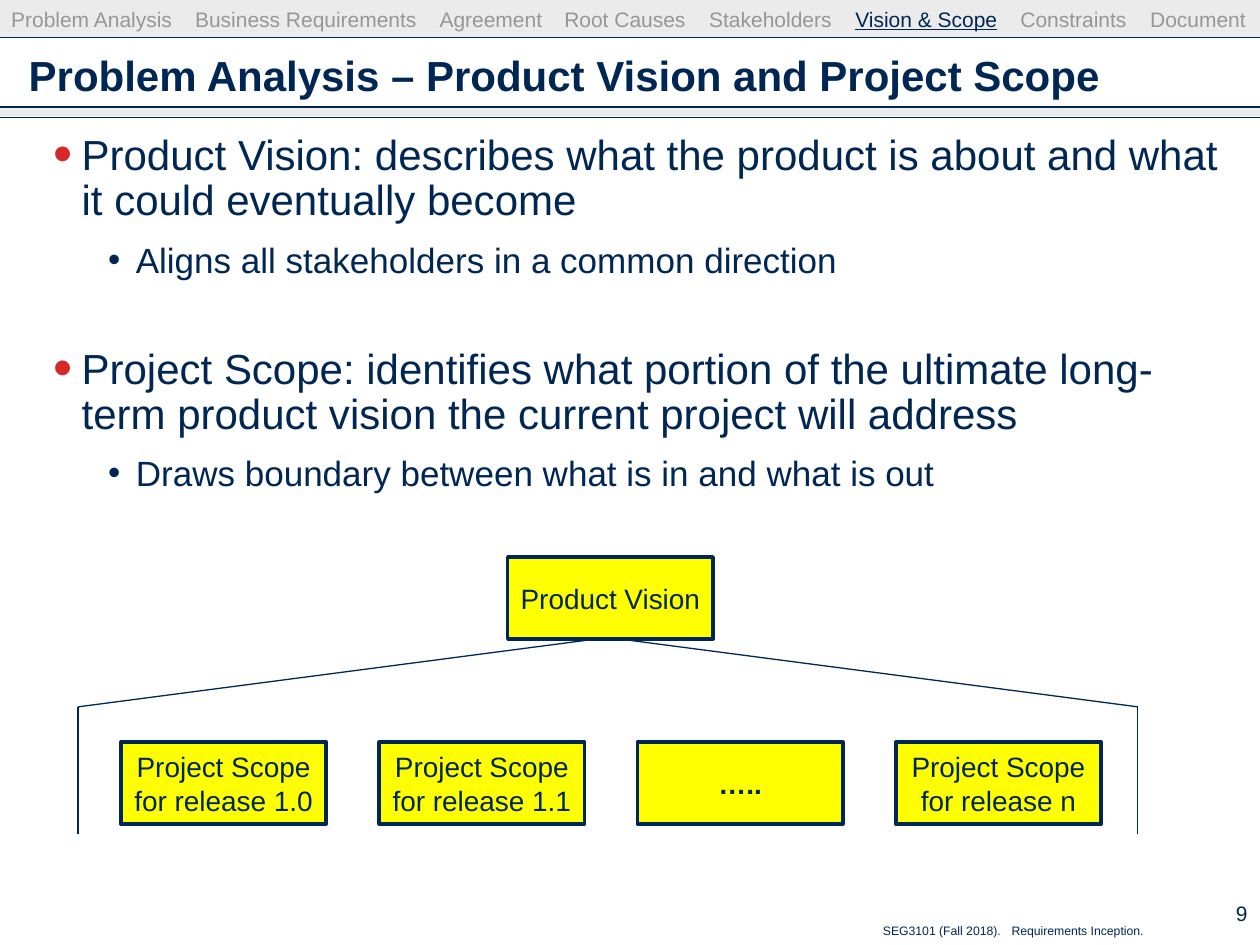
from dataclasses import dataclass

from lxml.etree import SubElement
from pptx import Presentation
from pptx.dml.color import RGBColor
from pptx.enum.shapes import MSO_CONNECTOR, MSO_SHAPE
from pptx.enum.text import MSO_ANCHOR, PP_ALIGN
from pptx.oxml.ns import qn
from pptx.util import Inches, Pt

COLORS = {"navy": "002654", "gray": "969696", "band": "CDCDCD",
          "yellow": "FFFF00", "red": "D62828"}


@dataclass
class Box:
    left: float
    top: float
    width: float
    height: float


@dataclass
class BulletLevel:
    size: int
    indent: float
    color: str
    bullet_percent: int


@dataclass
class Bullet:
    text: str
    level: int
    space_before: int


LEVELS = [BulletLevel(24, 0.42, "red", 130), BulletLevel(20, 0.85, "navy", 100)]
HANGING = 0.22
BULLETS = [
    Bullet("Product Vision: describes what the product is about and what "
           "it could eventually become", 0, 0),
    Bullet("Aligns all stakeholders in a common direction", 1, 6),
    Bullet("Project Scope: identifies what portion of the ultimate long-term "
           "product vision the current project will address", 0, 38),
    Bullet("Draws boundary between what is in and what is out", 1, 6),
]
TOPICS = ["Problem Analysis", "Business Requirements", "Agreement", "Root Causes",
          "Stakeholders", "Vision & Scope", "Constraints", "Document"]
TOPIC_TABS = [1.46, 3.4, 4.39, 5.54, 6.7, 8.01, 9.04]
CURRENT_TOPIC = "Vision & Scope"
RELEASES = ["Project Scope\nfor release 1.0", "Project Scope\nfor release 1.1",
            "…..", "Project Scope\nfor release n"]
RELEASE_LEFT, RELEASE_STEP, RELEASE_TOP = 0.96, 2.05, 5.89
BOX_WIDTH, BOX_HEIGHT = 1.63, 0.65


def rgb(name: str) -> RGBColor:
    return RGBColor.from_string(COLORS[name])


def style_font(font, size: float, color: str = "navy", **values) -> None:
    for name, value in {"name": "Arial", "size": Pt(size), **values}.items():
        setattr(font, name, value)
    font.color.rgb = rgb(color)


def lengths(box: Box) -> list:
    return [Inches(value) for value in (box.left, box.top, box.width, box.height)]


def add_text_box(slide, box: Box, **frame_values):
    """Add a wrapping text box and return its text frame."""
    frame = slide.shapes.add_textbox(*lengths(box)).text_frame
    for name, value in {"word_wrap": True, **frame_values}.items():
        setattr(frame, name, value)
    return frame


def add_line(slide, start: tuple[float, float], end: tuple[float, float]) -> None:
    line = slide.shapes.add_connector(
        MSO_CONNECTOR.STRAIGHT, *[Inches(value) for value in (*start, *end)])
    line.line.color.rgb = rgb("navy")
    line.line.width = Pt(0.75)
    SubElement(line.element.spPr, qn("a:effectLst"))


def add_band(slide, box: Box) -> None:
    """Add a gray strip at 40 % opacity."""
    band = slide.shapes.add_shape(MSO_SHAPE.RECTANGLE, *lengths(box))
    band.shadow.inherit = False
    band.fill.solid()
    band.fill.fore_color.rgb = rgb("band")
    band.line.fill.background()
    color = next(band.element.spPr.iter(qn("a:srgbClr")))
    SubElement(color, qn("a:alpha"), val="40000")


def add_yellow_box(slide, left: float, top: float, text: str) -> None:
    shape = slide.shapes.add_shape(
        MSO_SHAPE.RECTANGLE, *lengths(Box(left, top, BOX_WIDTH, BOX_HEIGHT)))
    shape.shadow.inherit = False
    shape.fill.solid()
    shape.fill.fore_color.rgb = rgb("yellow")
    shape.line.color.rgb = rgb("navy")
    shape.line.width = Pt(2)
    frame = shape.text_frame
    frame.margin_left = frame.margin_right = Inches(0.06)
    frame.vertical_anchor = MSO_ANCHOR.MIDDLE
    paragraph = frame.paragraphs[0]
    paragraph.text = text
    paragraph.alignment = PP_ALIGN.CENTER
    for run in paragraph.runs:
        style_font(run.font, 16, bold=text == "…..")


def set_tabs(paragraph, positions: list[float]) -> None:
    properties = paragraph._p.get_or_add_pPr()
    tab_list = SubElement(properties, qn("a:tabLst"))
    for position in positions:
        SubElement(tab_list, qn("a:tab"), pos=str(Inches(position)), algn="l")


def add_bullet(paragraph, bullet: Bullet) -> None:
    level = LEVELS[bullet.level]
    paragraph.level = bullet.level
    paragraph.line_spacing = Pt(26)
    paragraph.space_before = Pt(bullet.space_before)
    properties = paragraph._p.get_or_add_pPr()
    properties.set("marL", str(Inches(level.indent)))
    properties.set("indent", str(-Inches(HANGING)))
    bullet_color = SubElement(properties, qn("a:buClr"))
    SubElement(bullet_color, qn("a:srgbClr"), val=COLORS[level.color])
    SubElement(properties, qn("a:buSzPct"), val=str(level.bullet_percent * 1000))
    SubElement(properties, qn("a:buFont"), typeface="Arial")
    SubElement(properties, qn("a:buChar"), char="•")
    run = paragraph.add_run()
    run.text = bullet.text
    style_font(run.font, level.size)


def add_label(slide, box: Box, text: str, size: float, bold: bool = False,
              alignment=PP_ALIGN.LEFT, anchor=MSO_ANCHOR.MIDDLE):
    """Add a one-line text box and return its paragraph."""
    paragraph = add_text_box(slide, box, vertical_anchor=anchor).paragraphs[0]
    paragraph.alignment = alignment
    run = paragraph.add_run()
    run.text = text
    style_font(run.font, size, bold=bold)
    return paragraph


def add_navigation(slide) -> None:
    frame = add_text_box(slide, Box(-0.01, 0.05, 10.02, 0.25), margin_top=0)
    paragraph = frame.paragraphs[0]
    set_tabs(paragraph, TOPIC_TABS)
    for index, topic in enumerate(TOPICS):
        if index:
            style_font(paragraph.add_run().font, 12, "gray")
            paragraph.runs[-1].text = "\t"
        run = paragraph.add_run()
        run.text = topic
        current = topic == CURRENT_TOPIC
        style_font(run.font, 12, "navy" if current else "gray", underline=current)


def add_release_tree(slide) -> None:
    for side, peak in ((0.62, 4.82), (9.03, 4.83)):
        add_line(slide, (side, 6.62), (side, 5.61))
        add_line(slide, (side, 5.61), (peak, 5.06))
    add_yellow_box(slide, 4.03, 4.42, "Product Vision")
    for index, release in enumerate(RELEASES):
        add_yellow_box(slide, RELEASE_LEFT + index * RELEASE_STEP, RELEASE_TOP, release)


def main() -> None:
    presentation = Presentation()
    presentation.slide_width, presentation.slide_height = Inches(10), Inches(7.5)
    slide = presentation.slides.add_slide(presentation.slide_layouts[6])

    footer = add_label(slide, Box(6.91, 7.28, 2.34, 0.22),
                       "SEG3101 (Fall 2018).\tRequirements Inception.", 7,
                       anchor=MSO_ANCHOR.TOP)
    set_tabs(footer, [1.02])
    for top, height in ((0, 0.3), (0.85, 0.07)):
        add_band(slide, Box(0, top, 10, height))
    for top in (0.3, 0.85, 0.93):
        add_line(slide, (0, top), (10, top))
    add_label(slide, Box(9.3, 7.08, 0.7, 0.34), "9", 12, alignment=PP_ALIGN.RIGHT)
    add_label(slide, Box(0.13, 0.26, 9.74, 0.66),
              "Problem Analysis – Product Vision and Project Scope", 24, bold=True)

    body = add_text_box(slide, Box(0.13, 1.01, 9.74, 6.1))
    for index, bullet in enumerate(BULLETS):
        add_bullet(body.add_paragraph() if index else body.paragraphs[0], bullet)

    add_release_tree(slide)
    add_navigation(slide)
    presentation.save("out.pptx")


if __name__ == "__main__":
    main()
